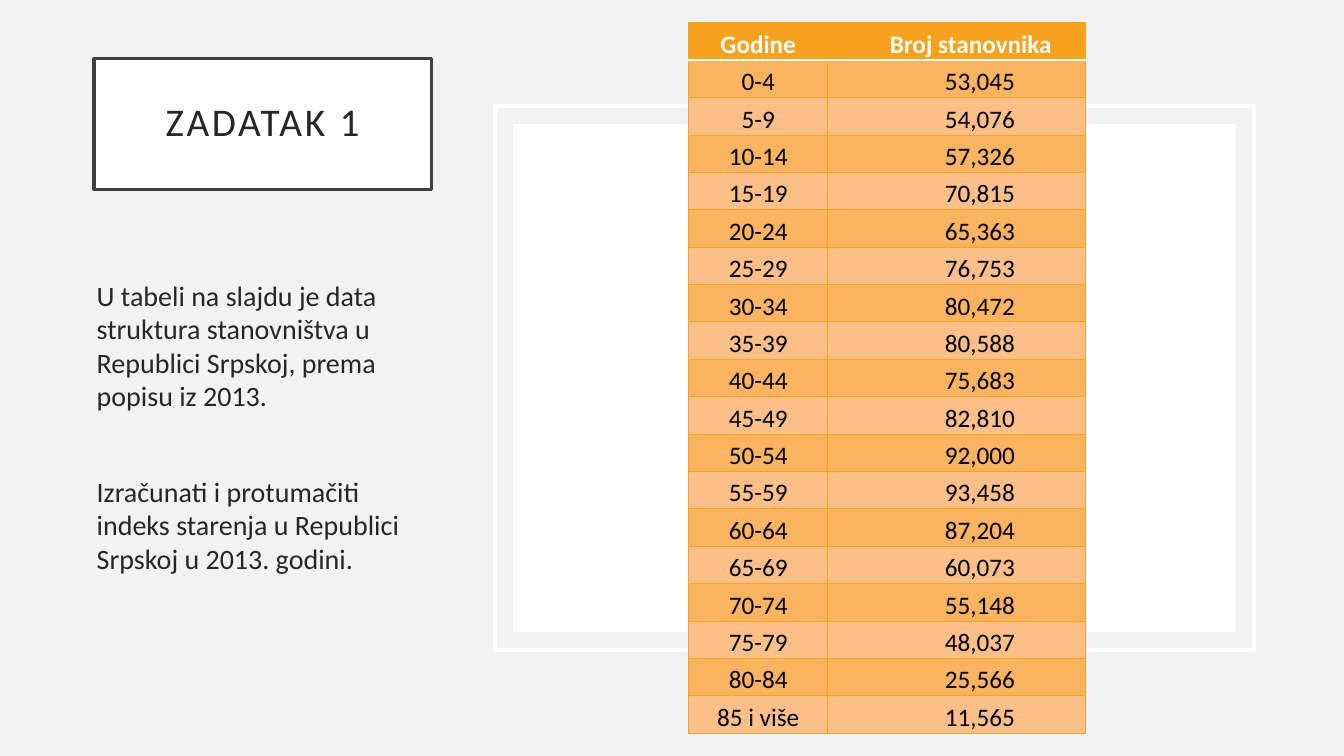
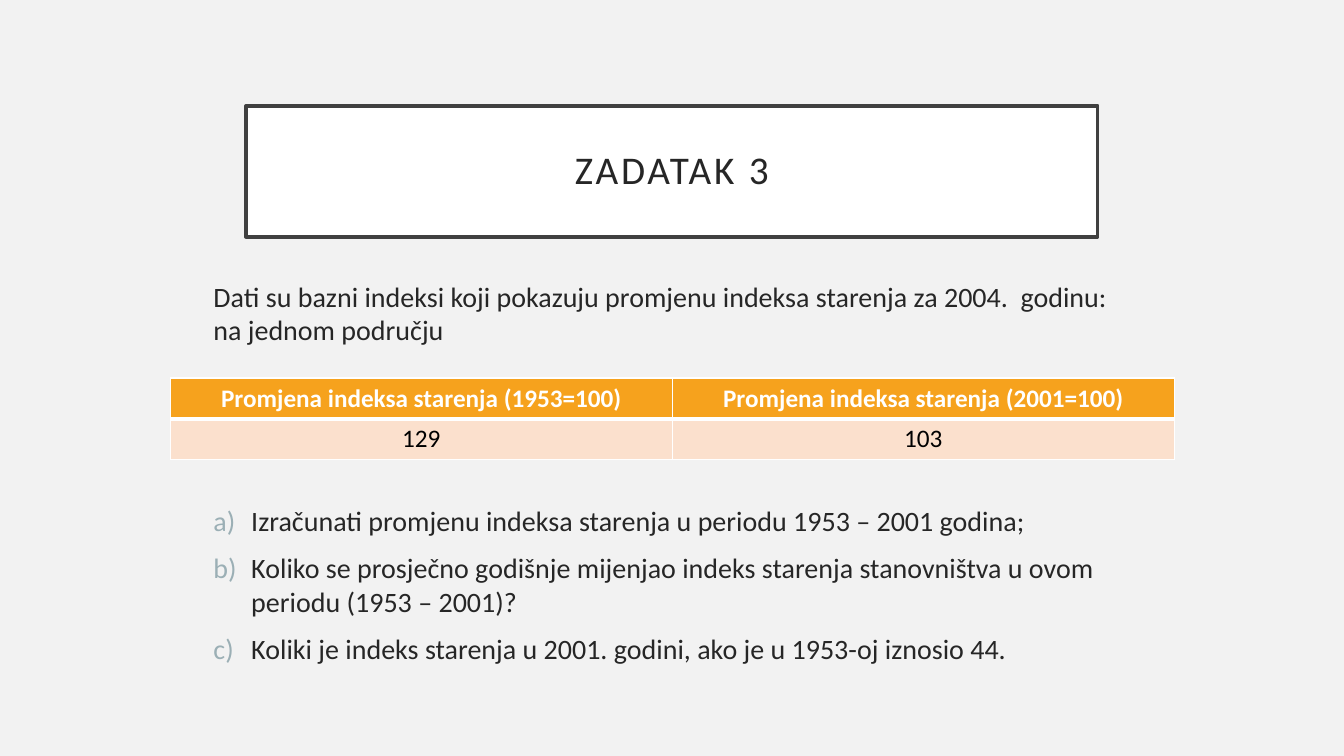
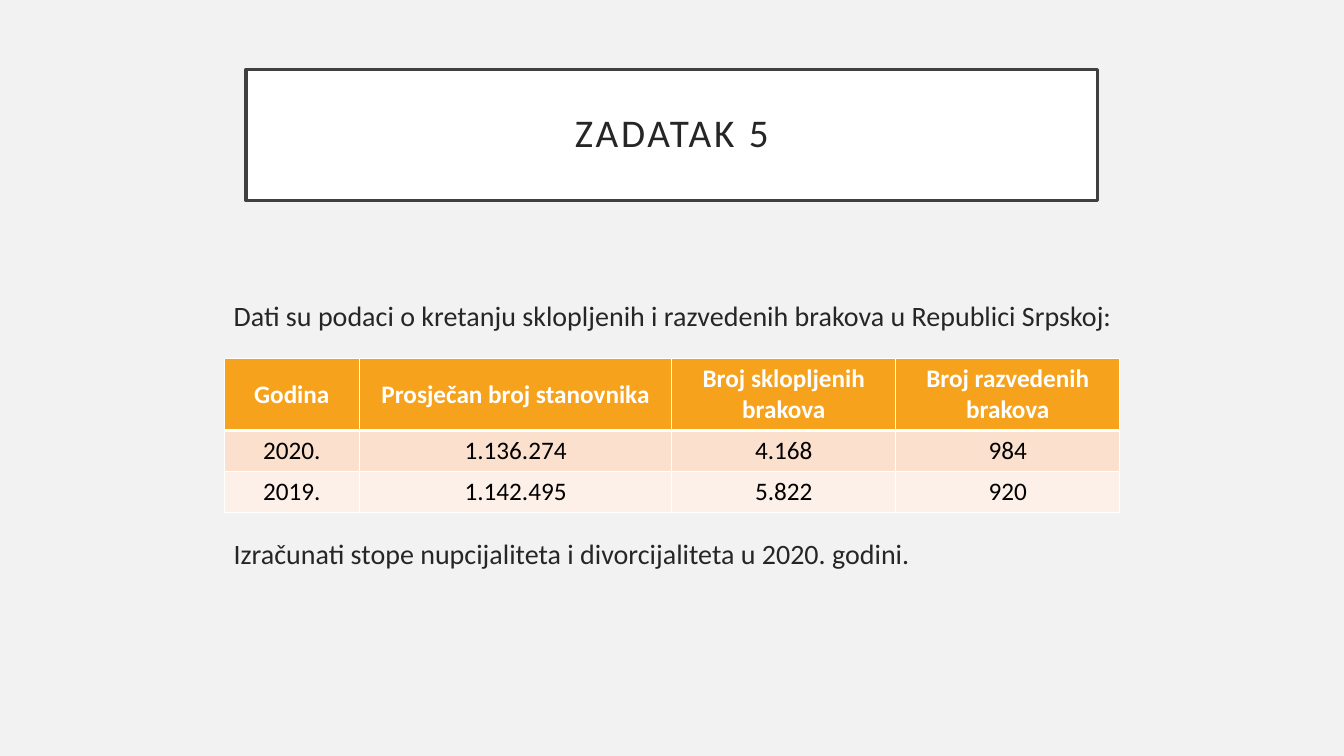
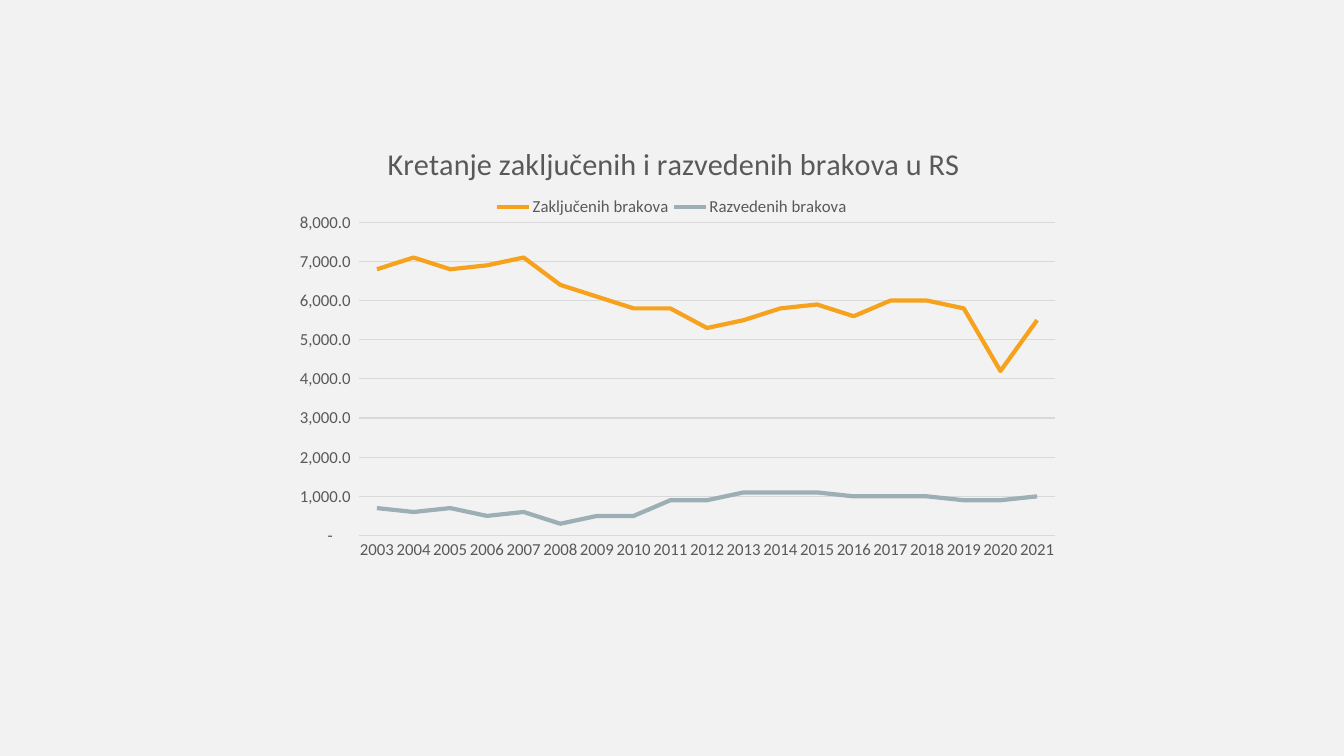
from dataclasses import dataclass

from lxml import etree
from pptx import Presentation
from pptx.chart import data as chart_data
from pptx.dml.color import RGBColor
from pptx.enum import chart as chart_enum, shapes, text
from pptx.oxml import ns
from pptx.util import Pt


@dataclass(frozen=True)
class Theme:
    font: str = "Calibri"
    background: str = "F2F2F2"
    white: str = "FFFFFF"
    black: str = "000000"
    frame: str = "404040"
    ink: str = "262626"
    muted: str = "595959"
    grid: str = "D9D9D9"
    orange: str = "F6A21D"
    grey_blue: str = "9BAFB5"
    strong_bands: tuple = ("FAB35E", "FCBF88")
    pale_bands: tuple = ("FBE0CD", "FDF0E8")
    title_size: float = 28
    body_size: float = 20
    table_size: float = 18
    chart_title_size: float = 21.6
    chart_size: float = 12
    body_line: float = 24
    body_gap: float = 10


THEME = Theme()

POPULATION = [
    ("Godine", "Broj stanovnika"),
    ("0-4", "53,045"), ("5-9", "54,076"), ("10-14", "57,326"),
    ("15-19", "70,815"), ("20-24", "65,363"), ("25-29", "76,753"),
    ("30-34", "80,472"), ("35-39", "80,588"), ("40-44", "75,683"),
    ("45-49", "82,810"), ("50-54", "92,000"), ("55-59", "93,458"),
    ("60-64", "87,204"), ("65-69", "60,073"), ("70-74", "55,148"),
    ("75-79", "48,037"), ("80-84", "25,566"), ("85 i više", "11,565"),
]
AGEING_INDEX = [
    ("Promjena indeksa starenja (1953=100)", "Promjena indeksa starenja (2001=100)"),
    ("129", "103"),
]
MARRIAGES = [
    ("Godina", "Prosječan broj stanovnika", "Broj sklopljenih brakova", "Broj razvedenih brakova"),
    ("2020.", "1.136.274", "4.168", "984"),
    ("2019.", "1.142.495", "5.822", "920"),
]

# Each body paragraph: text, empty lines left above it, lettered or not
POPULATION_TASK = [
    ("U tabeli na slajdu je data struktura stanovništva u Republici Srpskoj, prema popisu iz 2013.", 0, False),
    ("Izračunati i protumačiti indeks starenja u Republici Srpskoj u 2013. godini.", 1, False),
]
AGEING_TASK = [
    ("Dati su bazni indeksi koji pokazuju promjenu indeksa starenja za 2004.  godinu: na jednom području", 0, False),
    ("Izračunati promjenu indeksa starenja u periodu 1953 – 2001 godina;", 3, True),
    ("Koliko se prosječno godišnje mijenjao indeks starenja stanovništva u ovom periodu (1953 – 2001)?", 0, True),
    ("Koliki je indeks starenja u 2001. godini, ako je u 1953-oj iznosio 44.", 0, True),
]
MARRIAGE_TASK = [
    ("Dati su podaci o kretanju sklopljenih i razvedenih brakova u Republici Srpskoj:", 0, False),
    ("Izračunati stope nupcijaliteta i divorcijaliteta u 2020. godini.", 4, False),
]

CHART_TITLE = "Kretanje zaključenih i razvedenih brakova u RS"
CHART_YEARS = [str(year) for year in range(2003, 2022)]
CHART_SERIES = [
    ("Zaključenih brakova", THEME.orange,
     (6800, 7100, 6800, 6900, 7100, 6400, 6100, 5800, 5800, 5300,
      5500, 5800, 5900, 5600, 6000, 6000, 5800, 4200, 5500)),
    ("Razvedenih brakova", THEME.grey_blue,
     (700, 600, 700, 500, 600, 300, 500, 500, 900, 900,
      1100, 1100, 1100, 1000, 1000, 1000, 900, 900, 1000)),
]


def rgb(color):
    return RGBColor.from_string(color)


def points(box):
    return [Pt(length) for length in box]


def child(parent, tag, **attributes):
    element = etree.SubElement(parent, ns.qn(tag))
    for name, value in attributes.items():
        element.set(name, str(value))
    return element


def set_font(font, size, color, bold=False):
    font.name, font.size, font.bold = THEME.font, Pt(size), bold
    font.color.rgb = rgb(color)


def add_rectangle(slide, box, fill=None, line=None):
    shape = slide.shapes.add_shape(shapes.MSO_SHAPE.RECTANGLE, *points(box))
    shape.shadow.inherit = False
    if fill:
        shape.fill.solid()
        shape.fill.fore_color.rgb = rgb(fill)
    else:
        shape.fill.background()
    if line:
        shape.line.color.rgb = rgb(line)
        shape.line.width = Pt(2.5)
    else:
        shape.line.fill.background()
    return shape


def add_title(slide, title, box):
    frame = add_rectangle(slide, box, THEME.white, THEME.frame).text_frame
    frame.word_wrap = True
    frame.vertical_anchor = text.MSO_ANCHOR.MIDDLE
    frame.margin_left = frame.margin_right = frame.margin_top = frame.margin_bottom = Pt(14.4)
    paragraph = frame.paragraphs[0]
    paragraph.alignment = text.PP_ALIGN.CENTER
    paragraph.line_spacing = 0.9
    run = paragraph.add_run()
    run.text = title
    run._r.get_or_add_rPr().set("spc", "200")
    set_font(paragraph.font, THEME.title_size, THEME.ink)


def add_letter(paragraph):
    """Number the paragraph a), b), c) with a hanging indent."""
    properties = paragraph._p.get_or_add_pPr()
    properties.set("marL", str(Pt(27)))
    properties.set("indent", str(-Pt(27)))
    child(child(properties, "a:buClr"), "a:srgbClr", val=THEME.grey_blue)
    child(properties, "a:buFont", typeface="+mj-lt")
    child(properties, "a:buAutoNum", type="alphaLcParenR")


def add_body(slide, content, box):
    frame = slide.shapes.add_textbox(*points(box)).text_frame
    frame.word_wrap = True
    for index, (words, empty_lines, lettered) in enumerate(content):
        paragraph = frame.add_paragraph() if index else frame.paragraphs[0]
        paragraph.text = words
        gap = THEME.body_gap + empty_lines * (THEME.body_line + THEME.body_gap)
        paragraph.space_before = Pt(gap)
        if lettered:
            add_letter(paragraph)
        set_font(paragraph.font, THEME.body_size, THEME.ink)


def set_borders(cell, borders):
    """Draw borders given as (colour, width) for left, right, top and bottom."""
    properties = cell._tc.get_or_add_tcPr()
    for index, (side, (color, width)) in enumerate(zip("LRTB", borders)):
        line = child(properties, f"a:ln{side}", w=Pt(width))
        child(child(line, "a:solidFill"), "a:srgbClr", val=color)
        properties.insert(index, line)


def add_table(slide, rows, origin, widths, heights, bands, border, header_rule):
    size = (sum(widths), sum(heights))
    table = slide.shapes.add_table(len(rows), len(widths), *points(origin + size)).table
    table.horz_banding = False
    for column, width in zip(table.columns, widths):
        column.width = Pt(width)
    for index, (row, values) in enumerate(zip(table.rows, rows)):
        row.height = Pt(heights[index])
        header = index == 0
        top = header_rule if index == 1 else border
        bottom = header_rule if header else border
        for cell, value in zip(row.cells, values):
            cell.text = value
            cell.vertical_anchor = text.MSO_ANCHOR.MIDDLE
            cell.fill.solid()
            cell.fill.fore_color.rgb = rgb(THEME.orange if header else bands[(index - 1) % 2])
            set_borders(cell, (border, border, top, bottom))
            paragraph = cell.text_frame.paragraphs[0]
            paragraph.alignment = text.PP_ALIGN.CENTER
            set_font(paragraph.font, THEME.table_size, THEME.white if header else THEME.black, header)
    return table


def set_layout(element, position, x, y, w=None, h=None, inner=False):
    """Place a chart part by fractions of the chart's size."""
    for layout in element.findall(ns.qn("c:layout")):
        element.remove(layout)
    layout = child(element, "c:layout")
    element.insert(position, layout)
    manual = child(layout, "c:manualLayout")
    if inner:
        child(manual, "c:layoutTarget", val="inner")
    for name in ("xMode", "yMode"):
        child(manual, f"c:{name}", val="edge")
    for name, value in (("x", x), ("y", y), ("w", w), ("h", h)):
        if value is not None:
            child(manual, f"c:{name}", val=value)


def add_line_chart(slide, box):
    data = chart_data.CategoryChartData()
    data.categories = CHART_YEARS
    for name, _, values in CHART_SERIES:
        data.add_series(name, values)
    chart = slide.shapes.add_chart(chart_enum.XL_CHART_TYPE.LINE, *points(box), data).chart
    set_font(chart.font, THEME.chart_size, THEME.muted)

    chart.has_title = True
    chart.chart_title.include_in_layout = False
    frame = chart.chart_title.text_frame
    frame.text = CHART_TITLE
    set_font(frame.paragraphs[0].font, THEME.chart_title_size, THEME.muted)

    chart.has_legend = True
    chart.legend.position = chart_enum.XL_LEGEND_POSITION.TOP
    chart.legend.include_in_layout = False
    set_font(chart.legend.font, THEME.chart_size, THEME.muted)

    for axis in (chart.category_axis, chart.value_axis):
        axis.major_tick_mark = axis.minor_tick_mark = chart_enum.XL_TICK_MARK.NONE
        set_font(axis.tick_labels.font, THEME.chart_size, THEME.muted)
    values_axis = chart.value_axis
    values_axis.minimum_scale, values_axis.maximum_scale, values_axis.major_unit = 0, 8000, 1000
    values_axis.tick_labels.number_format = '_-* #,##0.0_-;\\-* #,##0.0_-;_-* "-"??_-;'
    values_axis.tick_labels.number_format_is_linked = False
    values_axis.format.line.fill.background()
    for line in (chart.category_axis.format.line, values_axis.major_gridlines.format.line):
        line.color.rgb = rgb(THEME.grid)
        line.width = Pt(0.75)

    for series, (_, color, _) in zip(chart.plots[0].series, CHART_SERIES):
        series.smooth = False
        series.format.line.color.rgb = rgb(color)
        series.format.line.width = Pt(3)

    root = chart._chartSpace.chart
    set_layout(root.find(ns.qn("c:title")), 1, 0.13, 0.05)
    set_layout(root.find(ns.qn("c:legend")), 1, 0.27, 0.18, 0.46, 0.05)
    set_layout(root.plotArea, 0, 0.1, 0.24, 0.89, 0.7, inner=True)


def build_population(slide):
    add_title(slide, "ZADATAK 1", (67, 41.8, 241.2, 93.6))
    add_body(slide, POPULATION_TASK, (62, 195.1, 244.8, 257))
    add_rectangle(slide, (353.5, 75.6, 542.2, 388.8), line=THEME.white)
    add_rectangle(slide, (366.5, 88.6, 516.2, 362.9), fill=THEME.white)
    table = add_table(slide, POPULATION, (491.9, 16.2), (99.4, 184.3),
                      [26.72] * len(POPULATION), THEME.strong_bands,
                      (THEME.orange, 0.5), (THEME.white, 1))
    for index, row in enumerate(table.rows):
        for cell, shift in zip(row.cells, (0, 33 if index else 20)):
            cell.vertical_anchor = text.MSO_ANCHOR.BOTTOM
            cell.margin_left = Pt(0.7 + shift)
            cell.margin_right = cell.margin_top = Pt(0.7)
            cell.margin_bottom = 0


def build_ageing_index(slide):
    add_title(slide, "ZADATAK 3", (175.7, 75.6, 608.4, 93.6))
    add_body(slide, AGEING_TASK, (145.4, 195.8, 669.6, 317.5))
    add_table(slide, AGEING_INDEX, (121.7, 270), (358.6, 358.6), (29.2, 29.2),
              THEME.pale_bands, (THEME.white, 1), (THEME.white, 3))


def build_marriages(slide):
    add_title(slide, "ZADATAK 5", (175.7, 49.7, 608.4, 93.6))
    add_body(slide, MARRIAGE_TASK, (159.8, 209.5, 666.7, 244))
    add_table(slide, MARRIAGES, (160.2, 256.3), (96.5, 223.2, 160, 160), (51.2, 29.2, 29.2),
              THEME.pale_bands, (THEME.white, 1), (THEME.white, 3))


def build_trend(slide):
    add_line_chart(slide, (200.2, 82.1, 559.4, 319.7))


def main():
    presentation = Presentation()
    presentation.slide_width, presentation.slide_height = Pt(960), Pt(540)
    background = presentation.slide_master.background.fill
    background.solid()
    background.fore_color.rgb = rgb(THEME.background)
    blank = presentation.slide_layouts[6]
    for build in (build_population, build_ageing_index, build_marriages, build_trend):
        build(presentation.slides.add_slide(blank))
    presentation.save("out.pptx")


if __name__ == "__main__":
    main()
